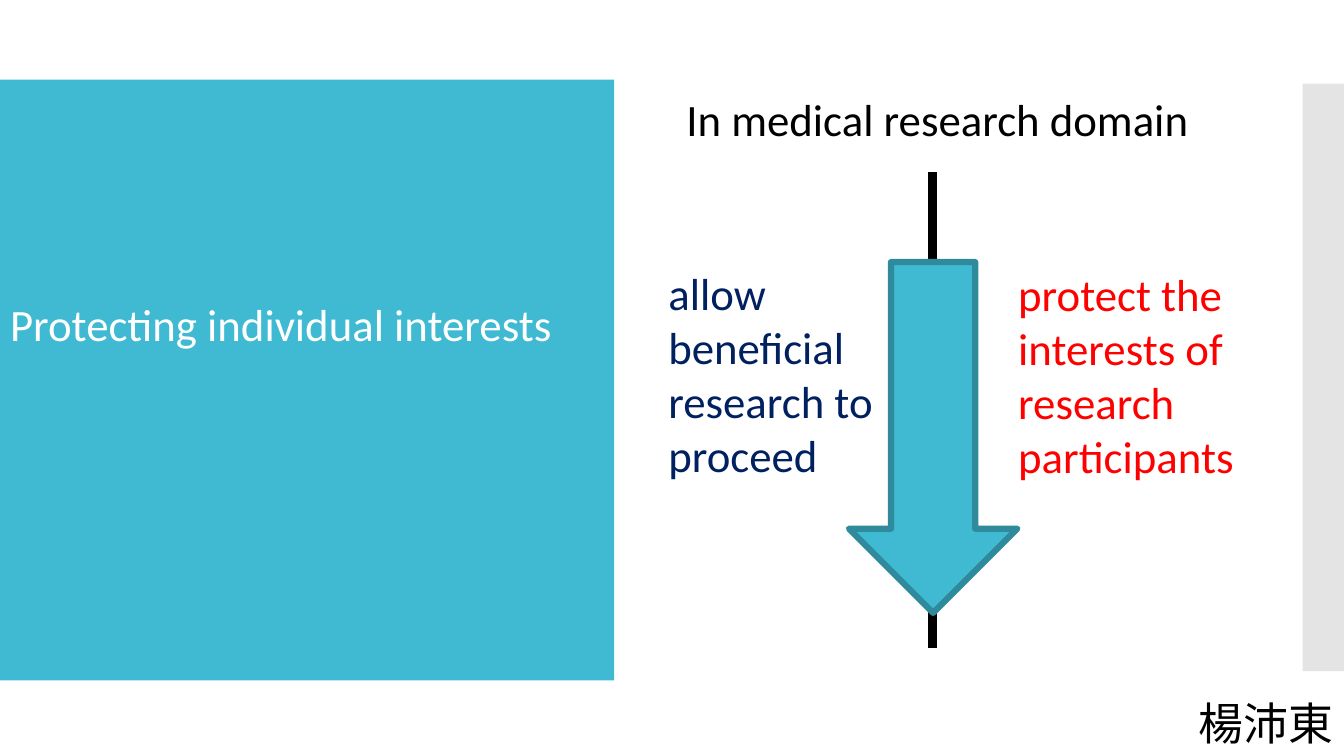
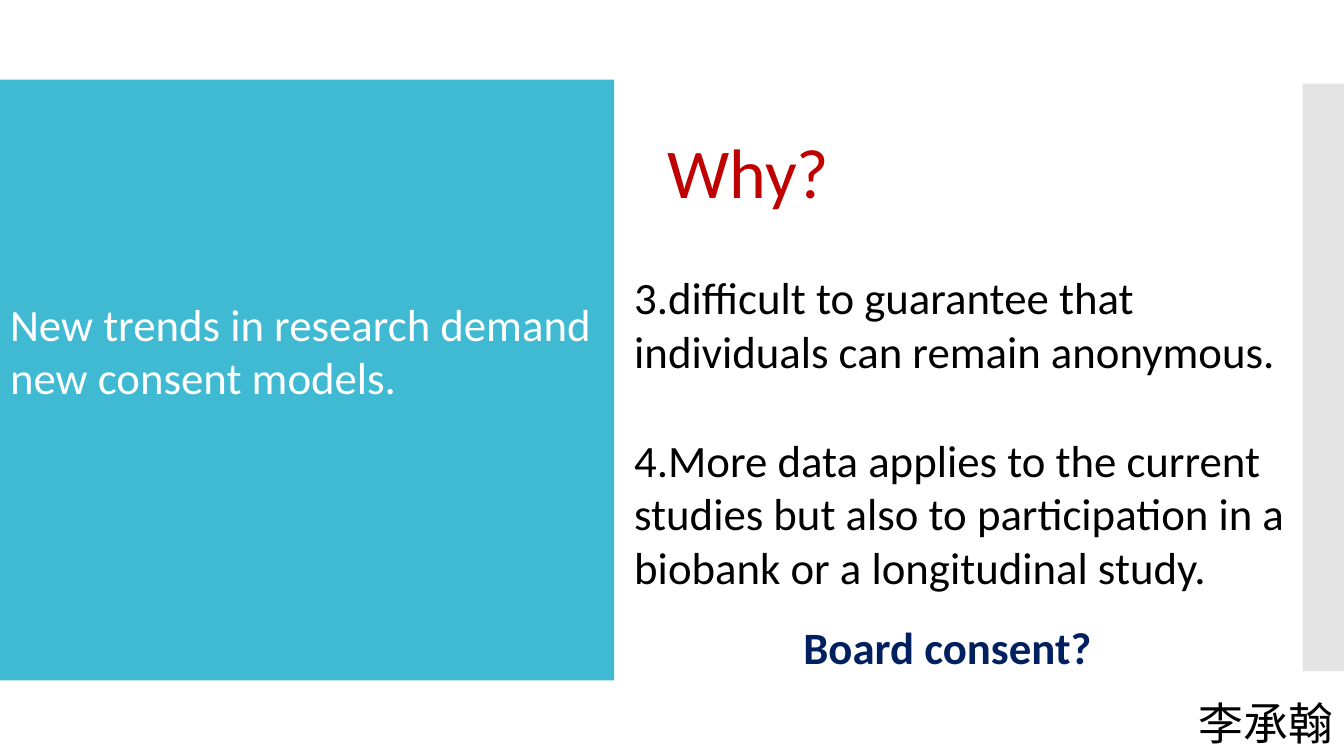
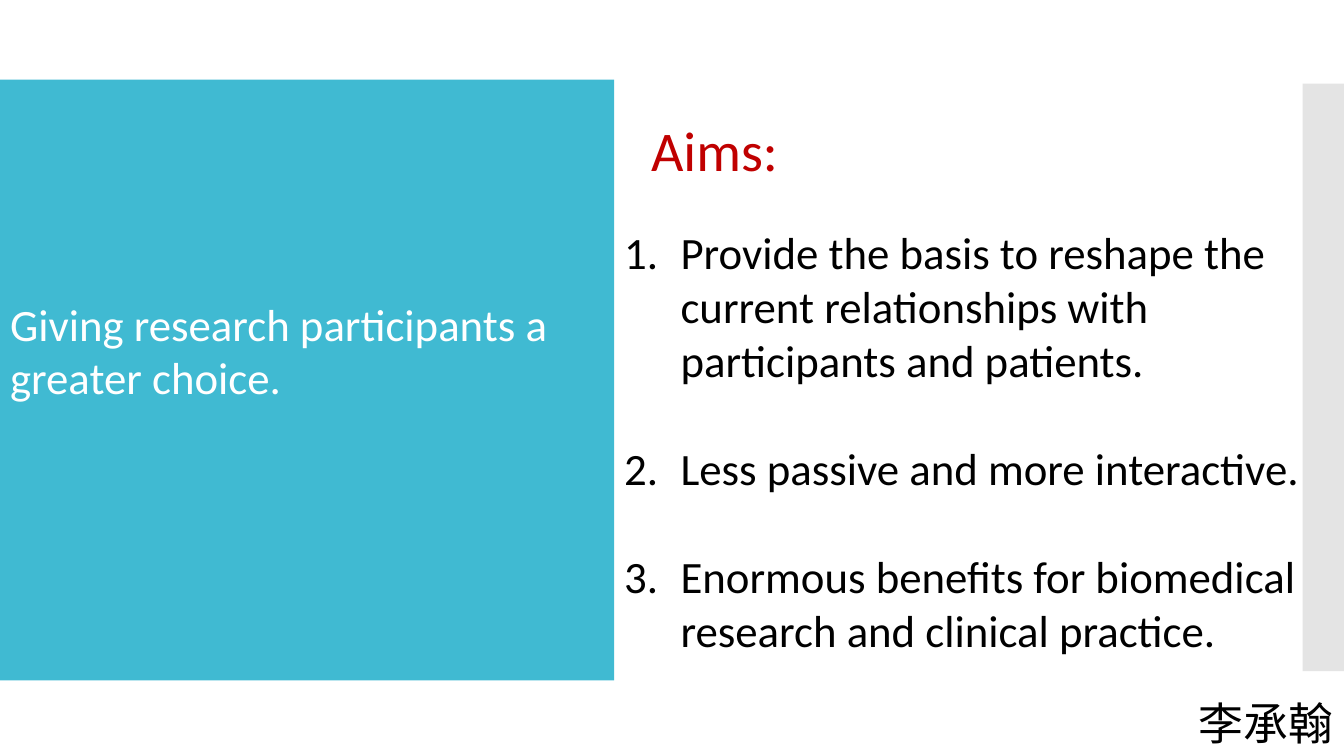
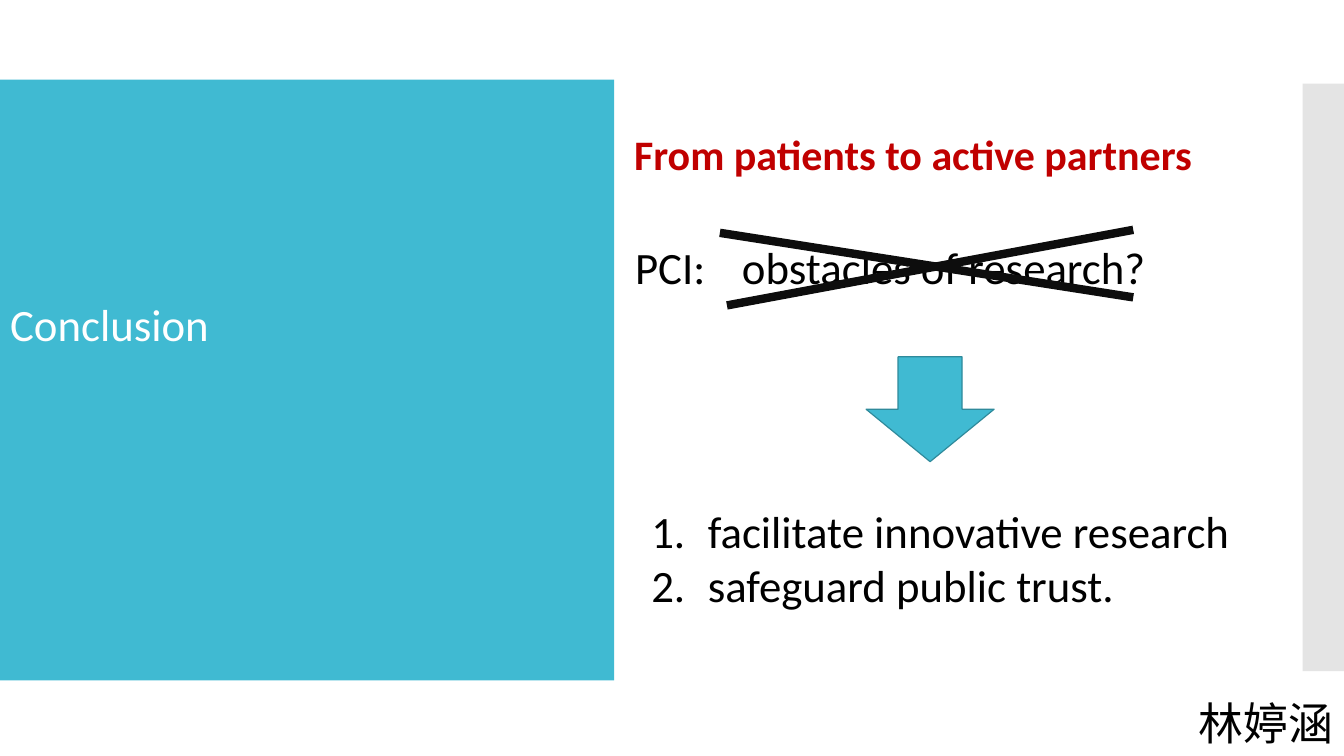
"""Build four slides on consent models in medical research."""
from dataclasses import dataclass

from lxml.etree import SubElement
from pptx import Presentation
from pptx.dml.color import RGBColor
from pptx.enum.shapes import MSO_CONNECTOR, MSO_SHAPE
from pptx.enum.text import MSO_ANCHOR, MSO_AUTO_SIZE, PP_ALIGN
from pptx.oxml.ns import qn
from pptx.presentation import Presentation as Deck
from pptx.slide import Slide
from pptx.text.text import TextFrame
from pptx.util import Inches, Pt


@dataclass(frozen=True)
class Theme:
    font: str = "Calibri"
    teal: str = "40BAD2"
    teal_edge: str = "2F8A9B"
    strip: str = "E4E4E4"
    white: str = "FFFFFF"
    black: str = "000000"
    ink: str = "0D0D0D"
    navy: str = "002060"
    red: str = "FF0000"
    crimson: str = "C00000"
    text_size: float = 32
    lead_size: float = 30
    aims_size: float = 40
    question_size: float = 50
    blank_line: float = 39
    stroke_width: float = 6
    indent: float = 0.56


THEME = Theme()


@dataclass(frozen=True)
class Area:
    left: float
    top: float
    width: float
    height: float

    def lengths(self) -> tuple:
        """Return the four sides as slide lengths."""
        return tuple(Inches(side) for side in (self.left, self.top, self.width, self.height))


@dataclass(frozen=True)
class Label:
    text: str
    area: Area
    color: str = THEME.black
    size: float = THEME.text_size
    bold: bool = False
    wrap: bool = False
    line_spacing: float = 1.0


@dataclass(frozen=True)
class ItemList:
    items: tuple[str, ...]
    area: Area
    numbered: bool = True
    gap: float = 0


@dataclass(frozen=True)
class Stroke:
    start: tuple[float, float]
    end: tuple[float, float]
    color: str


@dataclass(frozen=True)
class DownArrow:
    area: Area
    line_width: float


@dataclass(frozen=True)
class Content:
    title: str
    presenter: str
    labels: tuple[Label, ...]
    item_list: ItemList | None = None
    strokes: tuple[Stroke, ...] = ()
    arrow: DownArrow | None = None


BAND = Area(0, 0.79, 6.09, 5.96)
TITLE_TOP = 2.94
STRIP = Area(12.92, 0.83, 0.41, 5.83)
PRESENTER = Area(11.79, 6.59, 1.55, 0.91)

SLIDES = (
    Content(
        "Protecting individual interests",
        "楊沛東",
        (
            Label("In medical research domain", Area(6.71, 0.86, 5.27, 0.64)),
            Label("allow beneficial research to proceed", Area(6.53, 2.59, 2.88, 2.26),
                  THEME.navy, wrap=True),
            Label("protect the interests of research participants", Area(10, 2.6, 3.01, 2.26),
                  THEME.red, wrap=True),
        ),
        strokes=(Stroke((9.25, 1.71), (9.25, 6.43), THEME.black),),
        arrow=DownArrow(Area(8.42, 2.6, 1.67, 3.48), 4.5),
    ),
    Content(
        "New trends in research demand new consent models.",
        "李承翰",
        (
            Label("Why?", Area(6.52, 1.23, 1.82, 0.94), THEME.crimson, THEME.question_size),
            Label("Board consent?", Area(7.87, 6.1, 3.2, 0.64), THEME.navy, bold=True),
        ),
        ItemList(
            (
                "3.difficult to guarantee that individuals can remain anonymous.",
                "4.More data applies to the current studies but also to participation "
                "in a biobank or a longitudinal study.",
            ),
            Area(6.19, 2.63, 6.67, 3.33),
            numbered=False,
            gap=THEME.blank_line,
        ),
    ),
    Content(
        "Giving research participants a greater choice.",
        "李承翰",
        (Label("Aims:", Area(6.36, 1.1, 1.53, 0.77), THEME.crimson, THEME.aims_size),),
        ItemList(
            (
                "Provide the basis to reshape the current relationships with "
                "participants and patients.",
                "Less passive and more interactive.",
                "Enormous benefits for biomedical research and clinical practice.",
            ),
            Area(6.09, 2.18, 7.24, 4.41),
            gap=THEME.blank_line,
        ),
    ),
    Content(
        "Conclusion",
        "林婷涵",
        (
            Label("From patients to active partners", Area(6.19, 1.23, 6.55, 0.61),
                  THEME.crimson, THEME.lead_size, bold=True, wrap=True),
            Label("PCI:", Area(6.2, 2.33, 0.95, 0.64)),
            Label("obstacles of research?", Area(7.26, 2.33, 4.28, 0.64)),
        ),
        ItemList(
            ("facilitate innovative research", "safeguard public trust."),
            Area(6.36, 4.95, 6.67, 1.18),
        ),
        (
            Stroke((7.14, 2.31), (11.24, 2.95), THEME.ink),
            Stroke((7.21, 3.03), (11.24, 2.28), THEME.ink),
        ),
        DownArrow(Area(8.59, 3.54, 1.27, 1.04), 0.85),
    ),
)


def rgb(color: str) -> RGBColor:
    """Turn a hexadecimal string into a colour."""
    return RGBColor.from_string(color)


def place(shape, area: Area) -> None:
    """Move a placeholder to an area."""
    shape.left, shape.top, shape.width, shape.height = area.lengths()


def style_text(frame: TextFrame, color: str = THEME.black,
               size: float = THEME.text_size, bold: bool = False) -> None:
    """Align paragraphs left and format all their runs."""
    frame.auto_size = MSO_AUTO_SIZE.NONE
    frame.vertical_anchor = MSO_ANCHOR.TOP
    for para in frame.paragraphs:
        para.alignment = PP_ALIGN.LEFT
        for span in para.runs:
            span.font.name = THEME.font
            span.font.size = Pt(size)
            span.font.bold = bold
            span.font.color.rgb = rgb(color)


def add_title(page: Slide, text: str) -> None:
    """Use the title placeholder as the filled band on the left."""
    title = page.shapes.title
    place(title, BAND)
    title.fill.solid()
    title.fill.fore_color.rgb = rgb(THEME.teal)
    frame = title.text_frame
    frame.text = text
    frame.word_wrap = True
    frame.margin_top = Inches(TITLE_TOP - BAND.top)
    style_text(frame, THEME.white)


def add_items(page: Slide, item_list: ItemList) -> None:
    """Fill the body placeholder with plain or numbered paragraphs."""
    body = page.placeholders[1]
    place(body, item_list.area)
    frame = body.text_frame
    frame.text = "\n".join(item_list.items)
    frame.word_wrap = True
    style_text(frame)
    indent = Inches(THEME.indent) if item_list.numbered else 0
    for index, para in enumerate(frame.paragraphs):
        para.space_before = Pt(item_list.gap if index else 0)
        properties = para._p.get_or_add_pPr()
        properties.set("marL", str(indent))
        properties.set("indent", str(-indent))
        if item_list.numbered:
            SubElement(properties, qn("a:buFont")).set("typeface", "+mj-lt")
            SubElement(properties, qn("a:buAutoNum")).set("type", "arabicPeriod")
        else:
            SubElement(properties, qn("a:buNone"))


def add_label(page: Slide, label: Label) -> None:
    """Add one text box."""
    box = page.shapes.add_textbox(*label.area.lengths())
    frame = box.text_frame
    frame.text = label.text
    frame.word_wrap = label.wrap
    frame.paragraphs[0].line_spacing = label.line_spacing
    style_text(frame, label.color, label.size, label.bold)


def add_stroke(page: Slide, stroke: Stroke) -> None:
    """Add one thick straight line."""
    ends = (Inches(value) for value in stroke.start + stroke.end)
    line = page.shapes.add_connector(MSO_CONNECTOR.STRAIGHT, *ends)
    line.line.color.rgb = rgb(stroke.color)
    line.line.width = Pt(THEME.stroke_width)
    SubElement(line._element.spPr, qn("a:effectLst"))


def add_filled(page: Slide, kind: MSO_SHAPE, area: Area, color: str):
    """Add a flat preset shape without an outline."""
    shape = page.shapes.add_shape(kind, *area.lengths())
    shape.shadow.inherit = False
    shape.fill.solid()
    shape.fill.fore_color.rgb = rgb(color)
    shape.line.fill.background()
    return shape


def add_arrow(page: Slide, arrow: DownArrow) -> None:
    """Add an outlined block arrow pointing down."""
    shape = add_filled(page, MSO_SHAPE.DOWN_ARROW, arrow.area, THEME.teal)
    shape.line.color.rgb = rgb(THEME.teal_edge)
    shape.line.width = Pt(arrow.line_width)


def add_page(deck: Deck, content: Content) -> None:
    """Add one slide with the shared frame and its own content."""
    layout = "Title and Content" if content.item_list else "Title Only"
    page = deck.slides.add_slide(deck.slide_layouts.get_by_name(layout))
    add_title(page, content.title)
    add_filled(page, MSO_SHAPE.RECTANGLE, STRIP, THEME.strip)
    if content.item_list:
        add_items(page, content.item_list)
    for label in content.labels:
        add_label(page, label)
    add_label(page, Label(content.presenter, PRESENTER, line_spacing=1.5))
    for stroke in content.strokes:
        add_stroke(page, stroke)
    if content.arrow:
        add_arrow(page, content.arrow)


def main() -> None:
    """Build and save the deck."""
    deck = Presentation()
    deck.slide_width, deck.slide_height = Inches(13.33), Inches(7.5)
    for content in SLIDES:
        add_page(deck, content)
    deck.save("out.pptx")


if __name__ == "__main__":
    main()
